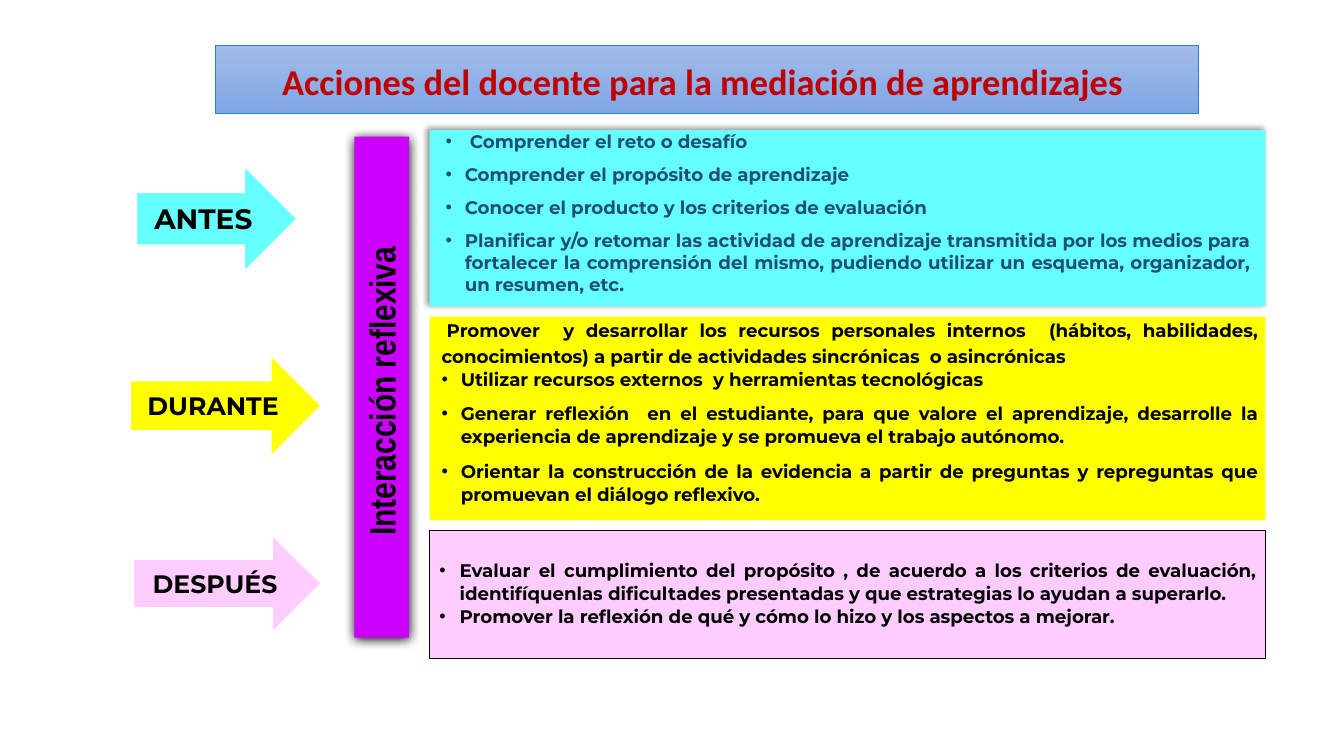
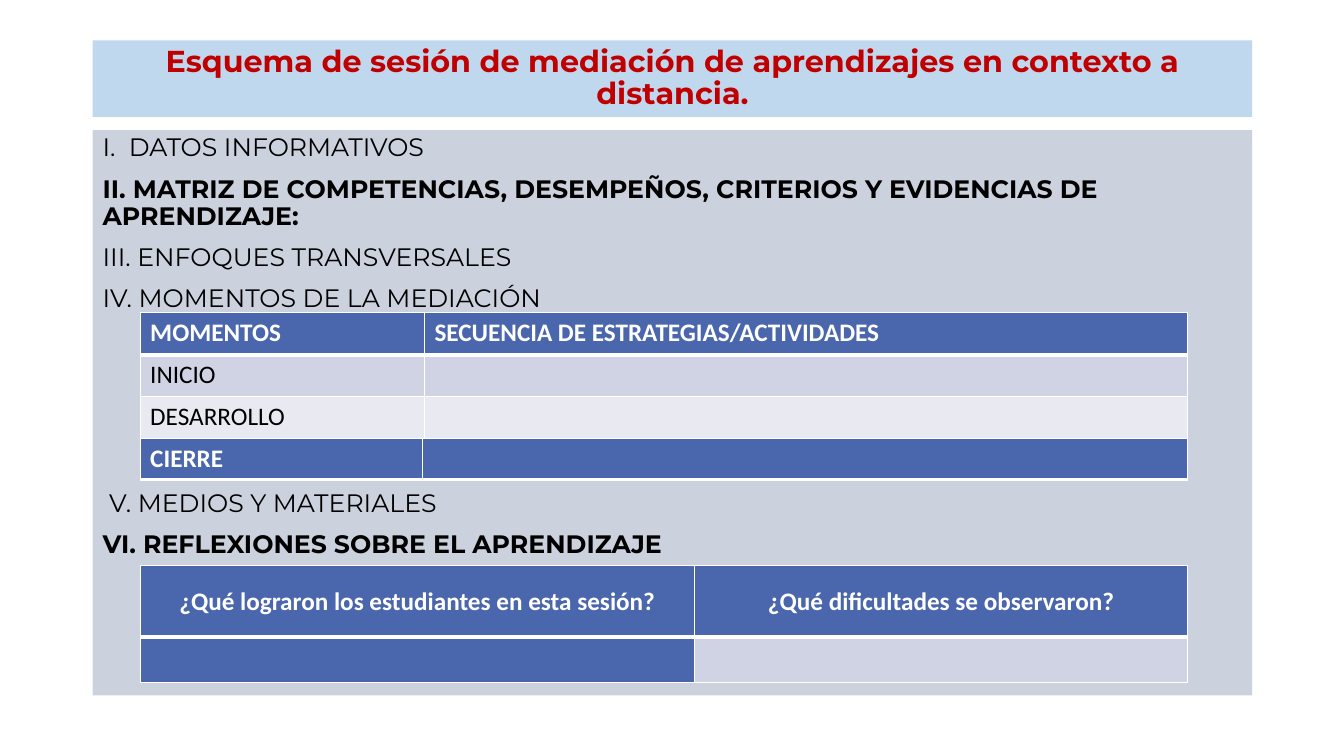
from dataclasses import dataclass

from lxml import etree
from pptx import Presentation
from pptx.dml.color import RGBColor
from pptx.enum.shapes import MSO_SHAPE
from pptx.enum.text import MSO_ANCHOR, PP_ALIGN
from pptx.oxml.ns import qn
from pptx.util import Pt

RECT, ARROW = MSO_SHAPE.RECTANGLE, MSO_SHAPE.RIGHT_ARROW
TOP, MIDDLE = MSO_ANCHOR.TOP, MSO_ANCHOR.MIDDLE
LEFT, CENTER, JUSTIFY = PP_ALIGN.LEFT, PP_ALIGN.CENTER, PP_ALIGN.JUSTIFY
PX = 9144  # 100 px to the inch


@dataclass(frozen=True)
class Theme:
    title: str = "C00000"
    ink: str = "000000"
    paper: str = "FFFFFF"
    navy: str = "1F4E79"
    cyan: str = "66FFFF"
    yellow: str = "FFFF00"
    pink: str = "FFCCFF"
    violet: str = "CC00FF"
    band_top: str = "A2BCE9"
    band_bottom: str = "80A6E6"
    band_line: str = "297FD5"
    title_fill: str = "C0D8ED"
    body_fill: str = "CCD2DD"
    head: str = "4A66AC"
    row_dark: str = "D0D3E3"
    row_light: str = "E9EAF1"
    font: str = "Montserrat"
    table_font: str = "Calibri"
    narrow_font: str = "Arial Narrow"
    banner_size: float = 26
    title_size: float = 21.6
    big_size: float = 20
    body_size: float = 18
    list_size: float = 13


T = Theme()


def add_box(s, at, fill, kind=RECT, line=None, shadow=None):
    """line is (colour, pt); shadow is (opacity %, blur pt, distance pt, degrees)."""
    sp = s.shapes.add_shape(kind, *(n * PX for n in at))
    sp.fill.solid()
    sp.fill.fore_color.rgb = RGBColor.from_string(fill)
    if line:
        sp.line.color.rgb = RGBColor.from_string(line[0])
        sp.line.width = Pt(line[1])
    else:
        sp.line.fill.background()
    sp.shadow.inherit = False
    if shadow:
        opacity, blur, dist, angle = shadow
        effects = sp._element.spPr.find(qn("a:effectLst"))
        outer = etree.SubElement(effects, qn("a:outerShdw"), blurRad=str(Pt(blur)),
                                 dist=str(Pt(dist)), dir=str(angle * 60000),
                                 algn="ctr", rotWithShape="0")
        clr = etree.SubElement(outer, qn("a:srgbClr"), val=T.ink)
        etree.SubElement(clr, qn("a:alpha"), val=str(opacity * 1000))
    return sp


def add_text(tf, lines, size, color=T.ink, font=T.font, bold=True, align=CENTER, anchor=MIDDLE,
             margins=(10, 5, 10, 5), spacing=1.0, before=0, after=0, bullets_from=None, indent=19):
    tf.word_wrap = True
    tf.vertical_anchor = anchor
    tf.margin_left, tf.margin_top, tf.margin_right, tf.margin_bottom = (m * PX for m in margins)
    for i, line in enumerate(lines):
        p = tf.paragraphs[0] if i == 0 else tf.add_paragraph()
        p.text = line
        p.alignment = align
        p.line_spacing = spacing
        p.space_before, p.space_after = Pt(before), Pt(after)
        f = p.runs[0].font
        f.size, f.name, f.bold = Pt(size), font, bold
        f.color.rgb = RGBColor.from_string(color)
        if bullets_from is not None and i >= bullets_from:
            pPr = p._p.get_or_add_pPr()
            pPr.set("marL", str(indent * PX))
            pPr.set("indent", str(-indent * PX))
            etree.SubElement(pPr, qn("a:buFont"), typeface="Arial")
            etree.SubElement(pPr, qn("a:buChar"), char="•")


prs = Presentation()
prs.slide_width, prs.slide_height = 1333 * PX, 750 * PX
blank = prs.slide_layouts[6]

# Slide 1: teacher actions before, during and after
s = prs.slides.add_slide(blank)
banner = add_box(s, (214, 45, 975, 68), T.band_top, line=(T.band_line, 0.5))
banner.fill.gradient()
banner.fill.gradient_angle = 270
for stop, color in zip(banner.fill.gradient_stops, (T.band_top, T.band_bottom)):
    stop.color.rgb = RGBColor.from_string(color)
add_text(banner.text_frame, ["Acciones del docente para la mediación de aprendizajes "],
         T.banner_size, T.title, T.table_font, spacing=1.07, after=8)

arrows = [
    ("ANTES", (135, 164, 160, 106), T.cyan, T.big_size),
    ("DURANTE", (129, 352, 190, 101), T.yellow, T.body_size),
    ("DESPUÉS", (132, 530, 187, 98), T.pink, T.body_size),
]
for label, at, fill, size in arrows:
    sp = add_box(s, at, fill, ARROW, line=(T.paper, 1.5))
    add_text(sp.text_frame, [label], size)

bar = add_box(s, (130, 357, 497, 54), T.violet, shadow=(100, 8.5, 1, 90))
bar.rotation = 270
add_text(bar.text_frame, ["Interacción reflexiva "], T.banner_size, font=T.narrow_font, anchor=TOP)

panels = [
    (175, dict(fill=T.cyan, shadow=(40, 4, 3, 225)),
     dict(color=T.navy, margins=(16, 0, 16, 0), after=8, bullets_from=0),
     [" Comprender el reto o desafío",
      "Comprender el propósito de aprendizaje",
      "Conocer el producto y los criterios de evaluación",
      "Planificar y/o retomar las actividad de aprendizaje transmitida por los medios para "
      "fortalecer la comprensión del mismo, pudiendo utilizar un esquema, organizador, "
      "un resumen, etc."]),
    (202, dict(fill=T.yellow),
     dict(margins=(12, 0, 8, 0), spacing=1.06, after=8, bullets_from=1),
     ["Promover  y desarrollar los recursos personales internos  (hábitos, habilidades, "
      "conocimientos) a partir de actividades sincrónicas  o asincrónicas",
      "Utilizar recursos externos  y herramientas tecnológicas",
      "Generar reflexión  en el estudiante, para que valore el aprendizaje, desarrolle la "
      "experiencia de aprendizaje y se promueva el trabajo autónomo.",
      "Orientar la construcción de la evidencia a partir de preguntas y repreguntas que "
      "promuevan el diálogo reflexivo."]),
    (127, dict(fill=T.pink, line=(T.ink, 0.5)),
     dict(margins=(10, 27, 10, 5), spacing=1.07, bullets_from=0, indent=20),
     ["Evaluar el cumplimiento del propósito , de acuerdo a los criterios de evaluación, "
      "identifíquenlas dificultades presentadas y que estrategias lo ayudan a superarlo.",
      "Promover la reflexión de qué y cómo lo hizo y los aspectos a mejorar."]),
]
top, gap = 129, 10
for height, look, text_style, lines in panels:
    sp = add_box(s, (426, top, 829, height), **look)
    add_text(sp.text_frame, lines, T.list_size, align=JUSTIFY, anchor=TOP, **text_style)
    if text_style["bullets_from"] == 1:
        intro = sp.text_frame.paragraphs[0]
        intro.line_spacing, intro.space_after = 1.15, Pt(0)
        intro._p.get_or_add_pPr().set("indent", str(5 * PX))
    top += height + gap

# Slide 2: session outline
s = prs.slides.add_slide(blank)
title = add_box(s, (92, 40, 1150, 76), T.title_fill)
add_text(title.text_frame,
         ["Esquema de sesión de mediación de aprendizajes en contexto a distancia."],
         T.title_size, T.title, spacing=0.9)

outline = [
    "I.  DATOS INFORMATIVOS",
    "II. MATRIZ DE COMPETENCIAS, DESEMPEÑOS, CRITERIOS Y EVIDENCIAS DE APRENDIZAJE:",
    "III. ENFOQUES TRANSVERSALES",
    "IV. MOMENTOS DE LA MEDIACIÓN",
    " V. MEDIOS Y MATERIALES",
    "VI. REFLEXIONES SOBRE EL APRENDIZAJE",
]
body = add_box(s, (92, 129, 1150, 561), T.body_fill)
add_text(body.text_frame, outline, T.body_size, bold=False, align=LEFT, anchor=TOP,
         spacing=0.9, before=10)
paragraphs = body.text_frame.paragraphs
for i in (1, 5):
    paragraphs[i].runs[0].font.bold = True
paragraphs[4].space_before = Pt(127)  # room for the tables of moments

plain = dict(align=LEFT, anchor=TOP)
centred = dict(align=CENTER, anchor=MIDDLE, margins=(7, 0, 7, 0), spacing=1.07)
tables = [
    (310, (282, 757), (42, 41, 42), plain,
     [["MOMENTOS", "SECUENCIA DE ESTRATEGIAS/ACTIVIDADES"], ["INICIO", ""], ["DESARROLLO", ""]],
     [[T.head] * 2, [T.row_dark] * 2, [T.row_light] * 2]),
    (435, (280, 759), (40,), plain, [["CIERRE", ""]], [[T.head] * 2]),
    (561, (550, 489), (71, 45), centred,
     [["¿Qué lograron los estudiantes en esta sesión?", "¿Qué dificultades se observaron?"],
      ["", ""]],
     [[T.head] * 2, [T.head, T.row_dark]]),
]
for top, widths, heights, style, texts, fills in tables:
    frame = s.shapes.add_table(len(heights), len(widths), 139 * PX, top * PX,
                               sum(widths) * PX, sum(heights) * PX)
    table = frame.table
    for col, width in zip(table.columns, widths):
        col.width = width * PX
    for r, height in enumerate(heights):
        table.rows[r].height = height * PX
        borders = {"L": 1, "R": 1, "T": 3 if r == 1 else 1, "B": 3 if r == 0 else 1}
        for c, text in enumerate(texts[r]):
            cell, fill = table.cell(r, c), fills[r][c]
            cell.fill.solid()
            cell.fill.fore_color.rgb = RGBColor.from_string(fill)
            tcPr = cell._tc.get_or_add_tcPr()
            for i, (side, width) in enumerate(borders.items()):
                ln = etree.Element(qn("a:ln" + side), w=str(Pt(width)))
                solid = etree.SubElement(ln, qn("a:solidFill"))
                etree.SubElement(solid, qn("a:srgbClr"), val=T.paper)
                tcPr.insert(i, ln)
            if text:
                is_head = fill == T.head
                add_text(cell.text_frame, [text], T.body_size, T.paper if is_head else T.ink,
                         T.table_font, bold=is_head, **style)
                cell.vertical_anchor = style["anchor"]

prs.save("out.pptx")
